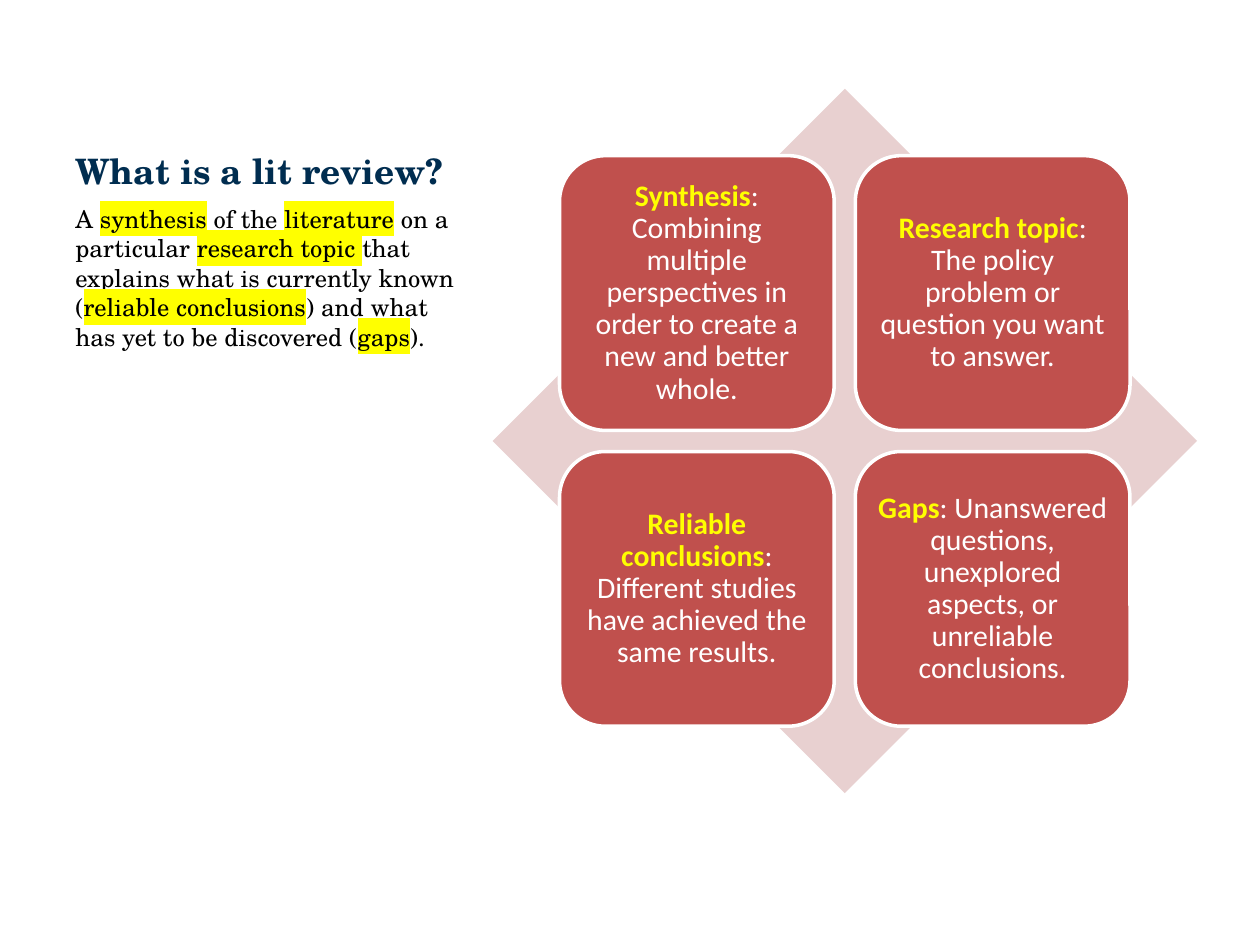
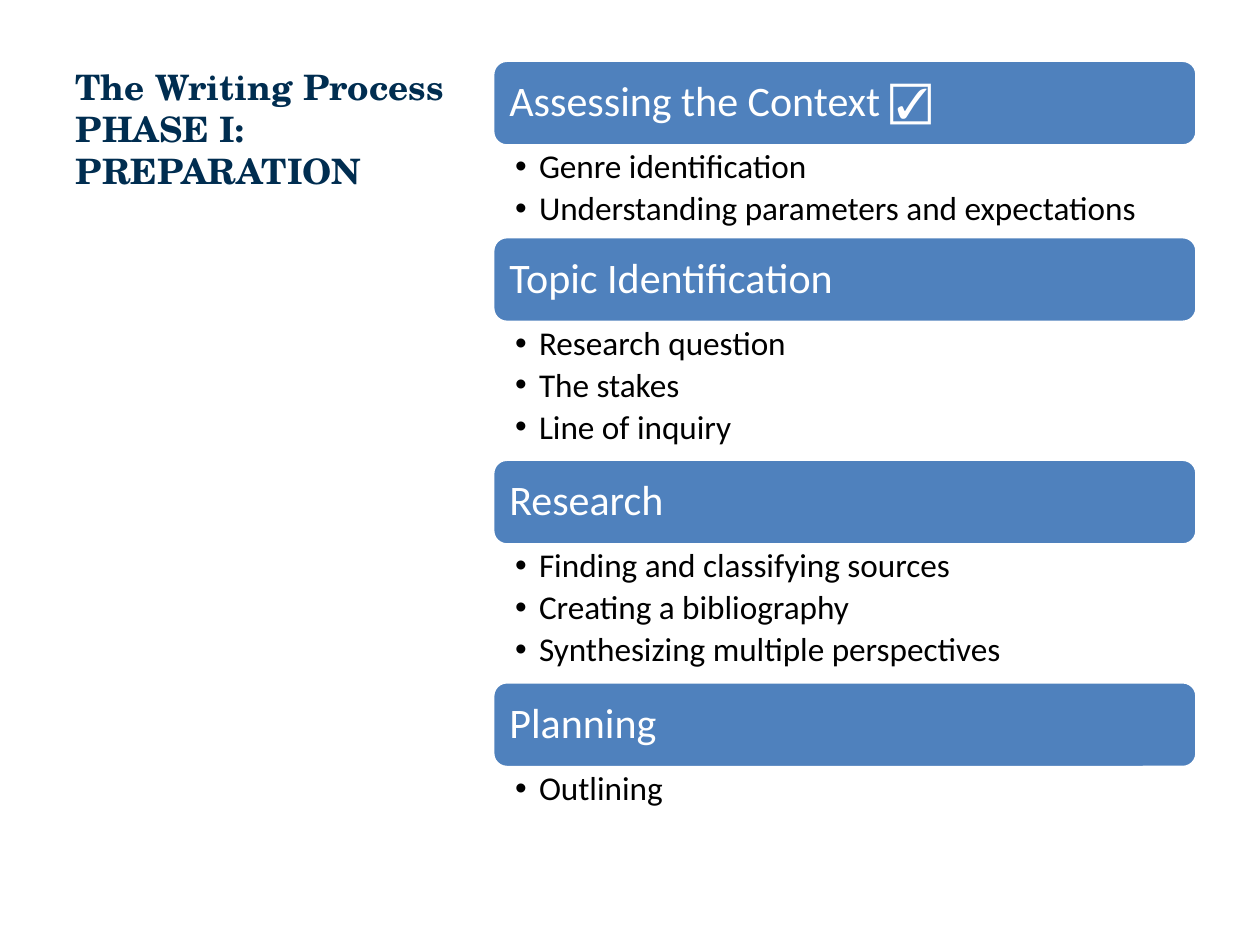
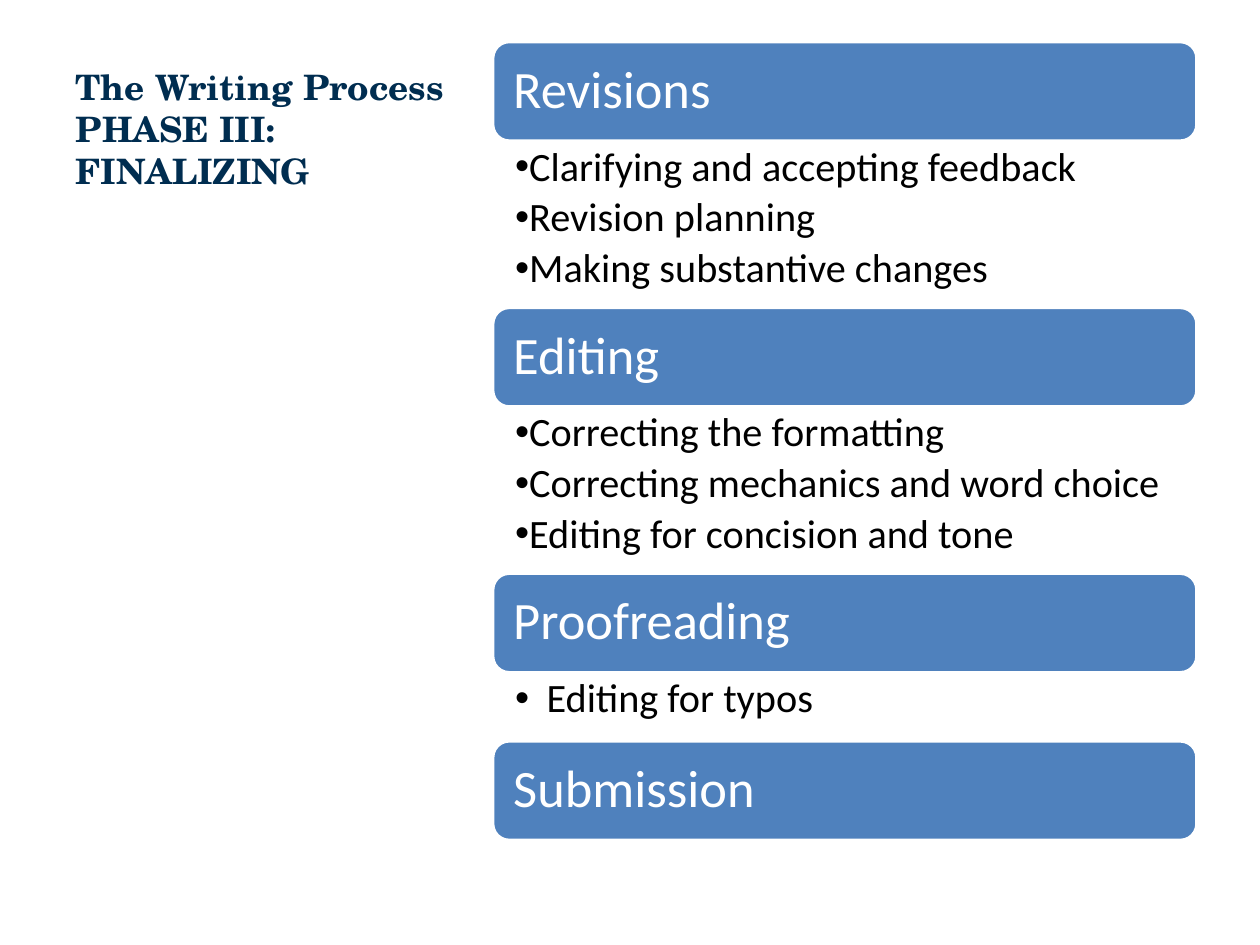
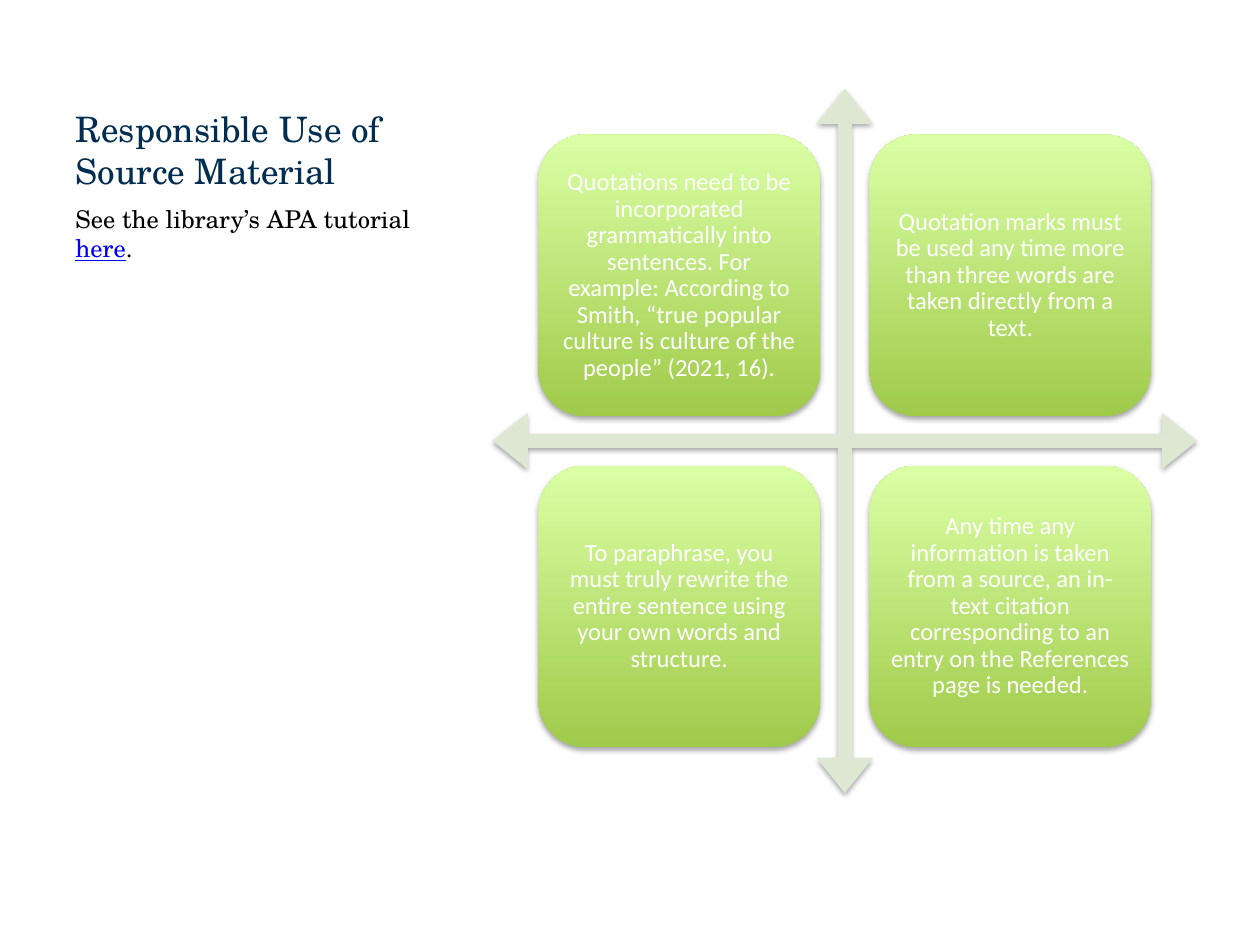
from lxml import etree
from pptx import Presentation
from pptx.dml.color import RGBColor
from pptx.enum.shapes import MSO_SHAPE
from pptx.enum.text import MSO_ANCHOR, MSO_AUTO_SIZE, PP_ALIGN
from pptx.oxml.ns import qn
from pptx.util import Pt

ROUNDED = MSO_SHAPE.ROUNDED_RECTANGLE
DIAMOND = MSO_SHAPE.DIAMOND
QUAD_ARROW = MSO_SHAPE.QUAD_ARROW
TOP, MIDDLE, BOTTOM = MSO_ANCHOR.TOP, MSO_ANCHOR.MIDDLE, MSO_ANCHOR.BOTTOM
LEFT, CENTER = PP_ALIGN.LEFT, PP_ALIGN.CENTER
NO_AUTOFIT = MSO_AUTO_SIZE.NONE

SERIF, SANS = "TeX Gyre Schola", "Calibri"
NAVY, BLACK, WHITE, YELLOW = "002D50", "000000", "FFFFFF", "FFFF00"
RED, PALE_RED, BLUE, LINK_BLUE = "C0504D", "E8D0D0", "4F81BD", "0000FF"
LIME, PALE_LIME, SAGE = "A0CA4A", "DAFFA5", "DEE7D1"

TITLE_BOX = (36, 21.6, 237, 91.5)
SUMMARY_BOX = (36, 113, 237, 369)
DIAGRAM_BOX = (281.5, 21.5, 402.5, 461)
TITLE_ONLY = 5

DEFINITION = [
    ("A ", False), ("synthesis", True), (" of the ", False),
    ("literature", True), (" on a particular ", False),
    ("research topic ", True),
    ("that explains what is currently known (", False),
    ("reliable conclusions", True),
    (") and what has yet to be discovered (", False),
    ("gaps", True), (").", False),
]
KEY_TERMS = [
    ("Synthesis", ": Combining multiple perspectives in order to create a new and better whole."),
    ("Research topic", ": The policy problem or question you want to answer."),
    ("Reliable conclusions", ": Different studies have achieved the same results."),
    ("Gaps", ": Unanswered questions, unexplored aspects, or unreliable conclusions."),
]
PREPARATION = [
    ("Assessing the Context ☑️", 51.8, 13.7,
     ["Genre identification", "Understanding parameters and expectations"]),
    ("Topic Identification", 78.2, 13.7,
     ["Research question", "The stakes", "Line of inquiry"]),
    ("Research", 78.2, 13.7,
     ["Finding and classifying sources", "Creating a bibliography",
      "Synthesizing multiple perspectives"]),
    ("Planning", 31, 13.7, ["Outlining"]),
]
FINALIZING = [
    ("Revisions", 95, 0,
     ["Clarifying and accepting feedback", "Revision planning",
      "Making substantive changes"]),
    ("Editing", 95, 0,
     ["Correcting the formatting", "Correcting mechanics and word choice",
      "Editing for concision and tone"]),
    ("Proofreading", 38.9, 18, ["Editing for typos"]),
    ("Submission", 0, 0, []),
]
SOURCE_RULES = [
    "Quotations need to be incorporated grammatically into sentences. For example: "
    "According to Smith, “true popular culture is culture of the people” (2021, 16).",
    "Quotation marks must be used any time more than three words are taken directly from a text.",
    "To paraphrase, you must truly rewrite the entire sentence using your own words and structure.",
    "Any time any information is taken from a source, an in-text citation corresponding "
    "to an entry on the References page is needed.",
]


def rgb(hex_color):
    return RGBColor.from_string(hex_color)


def points(box):
    return [Pt(length) for length in box]


def style(font, face, size, color, bold=False):
    font.name = face
    font.size = Pt(size)
    font.bold = bold
    font.color.rgb = rgb(color)


def set_frame(frame, anchor, insets):
    frame.word_wrap = True
    frame.auto_size = NO_AUTOFIT
    frame.vertical_anchor = anchor
    (frame.margin_left, frame.margin_top,
     frame.margin_right, frame.margin_bottom) = points(insets)


def add_run(paragraph, words, face, size, color, bold=False):
    run = paragraph.add_run()
    run.text = words
    style(run.font, face, size, color, bold)
    return run


def highlight(run, color):
    fill = run.font.fill._xPr.find(qn("a:solidFill"))
    marker = etree.Element(qn("a:highlight"))
    etree.SubElement(marker, qn("a:srgbClr"), val=color)
    fill.addnext(marker)


def add_bullet(paragraph, indent):
    properties = paragraph._p.get_or_add_pPr()
    properties.set("marL", str(Pt(indent)))
    properties.set("indent", str(-Pt(indent)))
    etree.SubElement(properties, qn("a:buFont"), typeface="Arial")
    etree.SubElement(properties, qn("a:buChar"), char="•")


def add_block(slide, preset, box, fill=None, outline=None):
    block = slide.shapes.add_shape(preset, *points(box))
    block.shadow.inherit = False
    if fill:
        block.fill.solid()
        block.fill.fore_color.rgb = rgb(fill)
    if outline:
        block.line.color.rgb = rgb(outline)
        block.line.width = Pt(2)
    else:
        block.line.fill.background()
    return block


def add_shadow(block):
    effects = block.element.spPr.find(qn("a:effectLst"))
    shadow = etree.SubElement(effects, qn("a:outerShdw"), blurRad=str(Pt(3.1)),
                              dist=str(Pt(1.8)), dir="5400000", rotWithShape="0")
    tint = etree.SubElement(shadow, qn("a:srgbClr"), val=BLACK)
    etree.SubElement(tint, qn("a:alpha"), val="35000")


def add_titled_slide(deck, heading, bold=True):
    slide = deck.slides.add_slide(deck.slide_layouts[TITLE_ONLY])
    title = slide.shapes.title
    title.left, title.top, title.width, title.height = points(TITLE_BOX)
    set_frame(title.text_frame, BOTTOM, (7.2, 3.6, 7.2, 3.6))
    title.text_frame.text = heading
    paragraph = title.text_frame.paragraphs[0]
    paragraph.alignment = LEFT
    for run in paragraph.runs:
        style(run.font, SERIF, 20, NAVY, bold)
    return slide


def add_summary(slide, box):
    summary = slide.shapes.add_textbox(*points(box))
    set_frame(summary.text_frame, TOP, (7.2, 3.6, 7.2, 3.6))
    return summary.text_frame.paragraphs[0]


def square_in(box):
    left, top, width, height = box
    side = min(width, height)
    return left + (width - side) / 2, top + (height - side) / 2, side, side


def tile_boxes(square, margin, share):
    left, top, side, _ = square
    offsets = (margin * side, (1 - margin - share) * side)
    return [(left + x, top + y, share * side, share * side)
            for y in offsets for x in offsets]


def tile_paragraph(tile, inset):
    set_frame(tile.text_frame, MIDDLE, (inset,) * 4)
    paragraph = tile.text_frame.paragraphs[0]
    paragraph.alignment = CENTER
    paragraph.line_spacing = 0.9
    return paragraph


def add_term_diamond(slide, box, terms):
    square = square_in(box)
    add_block(slide, DIAMOND, square, PALE_RED)
    for tile_box, (term, meaning) in zip(tile_boxes(square, 0.095, 0.39), terms):
        tile = add_block(slide, ROUNDED, tile_box, RED, WHITE)
        paragraph = tile_paragraph(tile, 5)
        add_run(paragraph, term, SANS, 17, YELLOW, True)
        add_run(paragraph, meaning, SANS, 17, WHITE)


def add_rule_cross(slide, box, rules):
    square = square_in(box)
    cross = add_block(slide, QUAD_ARROW, square, SAGE)
    for index, share in enumerate((0.02, 0.04, 0.05)):
        cross.adjustments[index] = share
    add_shadow(cross)
    for tile_box, rule in zip(tile_boxes(square, 0.065, 0.4), rules):
        tile = add_block(slide, ROUNDED, tile_box)
        tile.fill.gradient()
        tile.fill.gradient_angle = 90
        for stop, color in zip(tile.fill.gradient_stops, (LIME, PALE_LIME)):
            stop.color.rgb = rgb(color)
        add_shadow(tile)
        add_run(tile_paragraph(tile, 4.4), rule, SANS, 14, WHITE)


def add_step_list(slide, box, steps, indent, size):
    step_list = slide.shapes.add_textbox(*points(box))
    frame = step_list.text_frame
    set_frame(frame, TOP, (12.8, size * 0.13, size * 0.7, size * 0.13))
    frame.text = "\n".join(steps)
    for paragraph in frame.paragraphs:
        paragraph.level = 1
        paragraph.line_spacing = 0.9
        paragraph.space_after = Pt(size * 0.18)
        add_bullet(paragraph, indent)
        style(paragraph.runs[0].font, SANS, size, BLACK)


def add_stage_stack(slide, box, stages, bar_height, bar_size, step_size):
    left, top, width, height = box
    stack_height = sum(bar_height + stage[1] for stage in stages)
    y = top + (height - stack_height) / 2
    for stage, list_height, indent, steps in stages:
        bar = add_block(slide, ROUNDED, (left, y, width, bar_height), BLUE, WHITE)
        set_frame(bar.text_frame, MIDDLE, (bar_size * 0.3,) * 4)
        bar.text_frame.text = stage
        paragraph = bar.text_frame.paragraphs[0]
        paragraph.alignment = LEFT
        paragraph.line_spacing = 0.9
        style(paragraph.runs[0].font, SANS, bar_size, WHITE)
        y += bar_height
        if steps:
            add_step_list(slide, (left, y, width, list_height), steps, indent, step_size)
        y += list_height


def build_definition(deck):
    slide = add_titled_slide(deck, "What is a lit review?")
    summary = add_summary(slide, SUMMARY_BOX)
    for words, marked in DEFINITION:
        run = add_run(summary, words, SERIF, 14, BLACK)
        if marked:
            highlight(run, YELLOW)
    add_term_diamond(slide, DIAGRAM_BOX, KEY_TERMS)


def build_phase(deck, phase, stages, bar_height, bar_size, step_size):
    slide = add_titled_slide(deck, f"The Writing Process\v{phase}")
    add_stage_stack(slide, DIAGRAM_BOX, stages, bar_height, bar_size, step_size)


def build_source_use(deck):
    slide = add_titled_slide(deck, "Responsible Use of Source Material", bold=False)
    summary = add_summary(slide, SUMMARY_BOX)
    add_run(summary, "See the library’s APA tutorial ", SERIF, 14, BLACK)
    add_run(summary, "here", SERIF, 14, LINK_BLUE).font.underline = True
    add_run(summary, ".", SERIF, 14, BLACK)
    add_rule_cross(slide, DIAGRAM_BOX, SOURCE_RULES)


def main():
    deck = Presentation()
    deck.slide_width, deck.slide_height = Pt(720), Pt(540)
    build_definition(deck)
    build_phase(deck, "PHASE I: PREPARATION", PREPARATION, 49, 24, 19)
    build_phase(deck, "PHASE III: FINALIZING", FINALIZING, 56.9, 30, 23)
    build_source_use(deck)
    deck.save("out.pptx")


if __name__ == "__main__":
    main()
